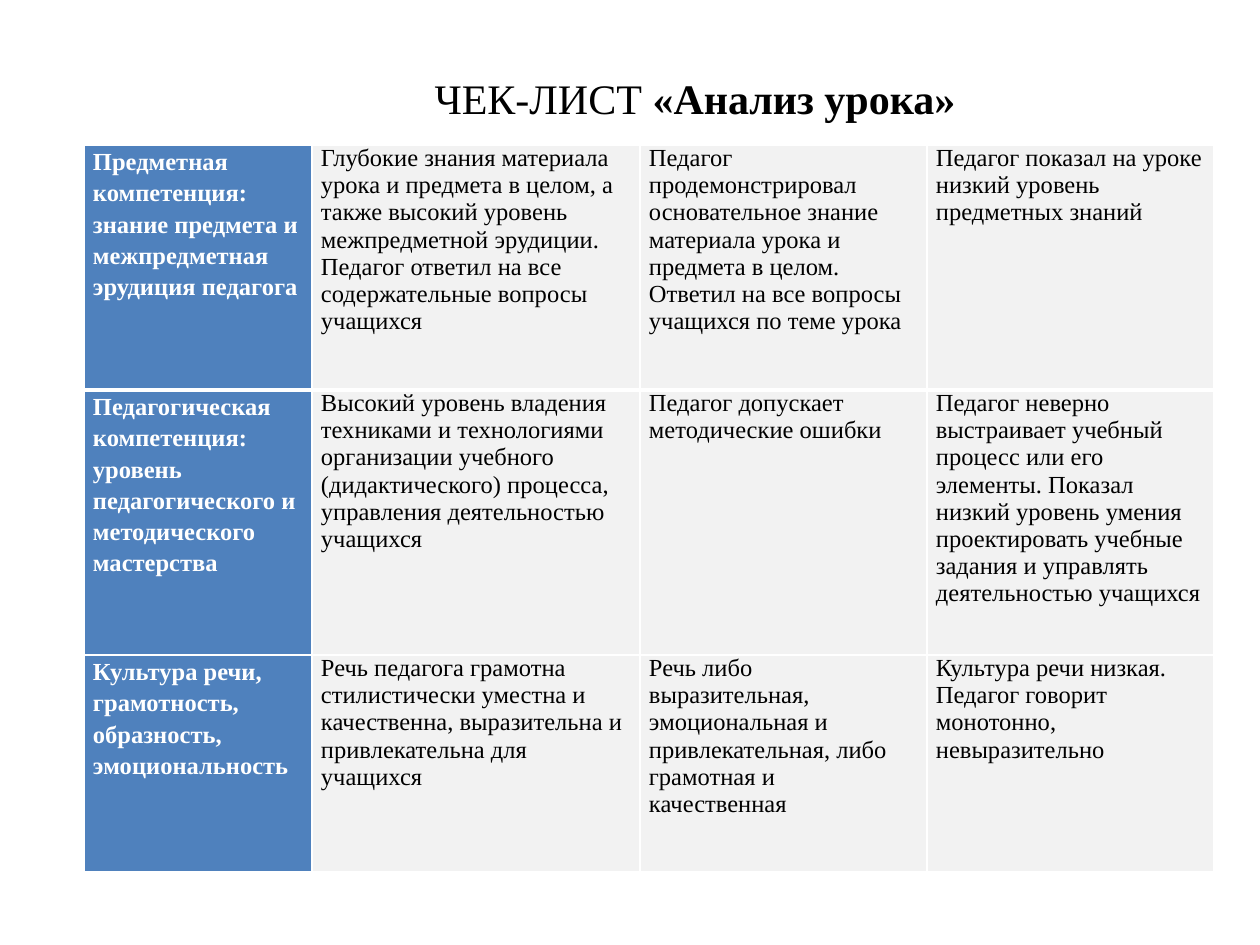
from lxml import etree
from pptx import Presentation
from pptx.dml.color import RGBColor
from pptx.enum.text import MSO_ANCHOR, MSO_AUTO_SIZE, PP_ALIGN
from pptx.oxml.ns import qn
from pptx.util import Pt

LEFT = PP_ALIGN.LEFT
TOP = MSO_ANCHOR.TOP
GROW = MSO_AUTO_SIZE.SHAPE_TO_FIT_TEXT
FONT = "Times New Roman"
INK = {"head": "4F81BD", "body": "F2F2F2", "white": "FFFFFF", "black": "000000"}


def px(n):
    return round(n * 914400 / 126)


def style(run, size, color, bold):
    font = run.font
    font.name = FONT
    font.size = Pt(size)
    font.bold = bold
    font.color.rgb = RGBColor.from_string(INK[color])


prs = Presentation()
prs.slide_width, prs.slide_height = px(1260), px(945)
slide = prs.slides.add_slide(prs.slide_layouts[5])

title = slide.shapes.title
title.left, title.top, title.width, title.height = px(422), px(66), px(552), px(63)
frame = title.text_frame
frame.word_wrap = False
frame.auto_size = GROW
frame.vertical_anchor = TOP
para = frame.paragraphs[0]
para.text = "ЧЕК-ЛИСТ"
para.alignment = LEFT
para.add_run().text = " «Анализ урока»"
for run, bold in zip(para.runs, (False, True)):
    style(run, 24, "black", bold)

rows = [
    ["Предметная компетенция: знание предмета и межпредметная эрудиция педагога",
     "Глубокие знания материала урока и предмета в целом, а также высокий уровень межпредметной эрудиции. Педагог ответил на все содержательные вопросы учащихся",
     "Педагог продемонстрировал основательное знание материала урока и предмета в целом. Ответил на все вопросы учащихся по теме урока",
     "Педагог показал на уроке низкий уровень предметных знаний"],
    ["Педагогическая компетенция: уровень педагогического и методического мастерства",
     "Высокий уровень владения техниками и технологиями организации учебного (дидактического) процесса, управления деятельностью учащихся",
     "Педагог допускает методические ошибки",
     "Педагог неверно выстраивает учебный процесс или его элементы. Показал низкий уровень умения проектировать учебные задания и управлять деятельностью учащихся"],
    ["Культура речи, грамотность, образность, эмоциональность",
     "Речь педагога грамотна стилистически уместна и качественна, выразительна и привлекательна для учащихся",
     "Речь либо выразительная, эмоциональная и привлекательная, либо грамотная и качественная",
     "Культура речи низкая. Педагог говорит монотонно, невыразительно"],
]
widths = [228, 328, 287, 287]
heights = [245, 265, 217]

table = slide.shapes.add_table(
    len(rows), len(widths), px(84), px(145), px(sum(widths)), px(sum(heights))).table
for col, width in zip(table.columns, widths):
    col.width = px(width)
for row, height in zip(table.rows, heights):
    row.height = px(height)

for r, texts in enumerate(rows):
    for c, text in enumerate(texts):
        head = c == 0
        cell = table.cell(r, c)
        cell.margin_left = cell.margin_right = px(9)
        cell.margin_top = cell.margin_bottom = 0
        para = cell.text_frame.paragraphs[0]
        para.text = text
        if head:
            para.line_spacing = 1.15
        style(para.runs[0], 14, "white" if head else "black", head)
        props = cell._tc.get_or_add_tcPr()
        for side in ("lnL", "lnR", "lnT", "lnB"):
            thick = (r, side) in ((0, "lnB"), (1, "lnT"))
            line = etree.SubElement(props, qn("a:" + side), w=str(Pt(3 if thick else 1)))
            fill = etree.SubElement(line, qn("a:solidFill"))
            etree.SubElement(fill, qn("a:srgbClr"), val=INK["white"])
        cell.fill.solid()
        cell.fill.fore_color.rgb = RGBColor.from_string(INK["head" if head else "body"])

prs.save("out.pptx")
